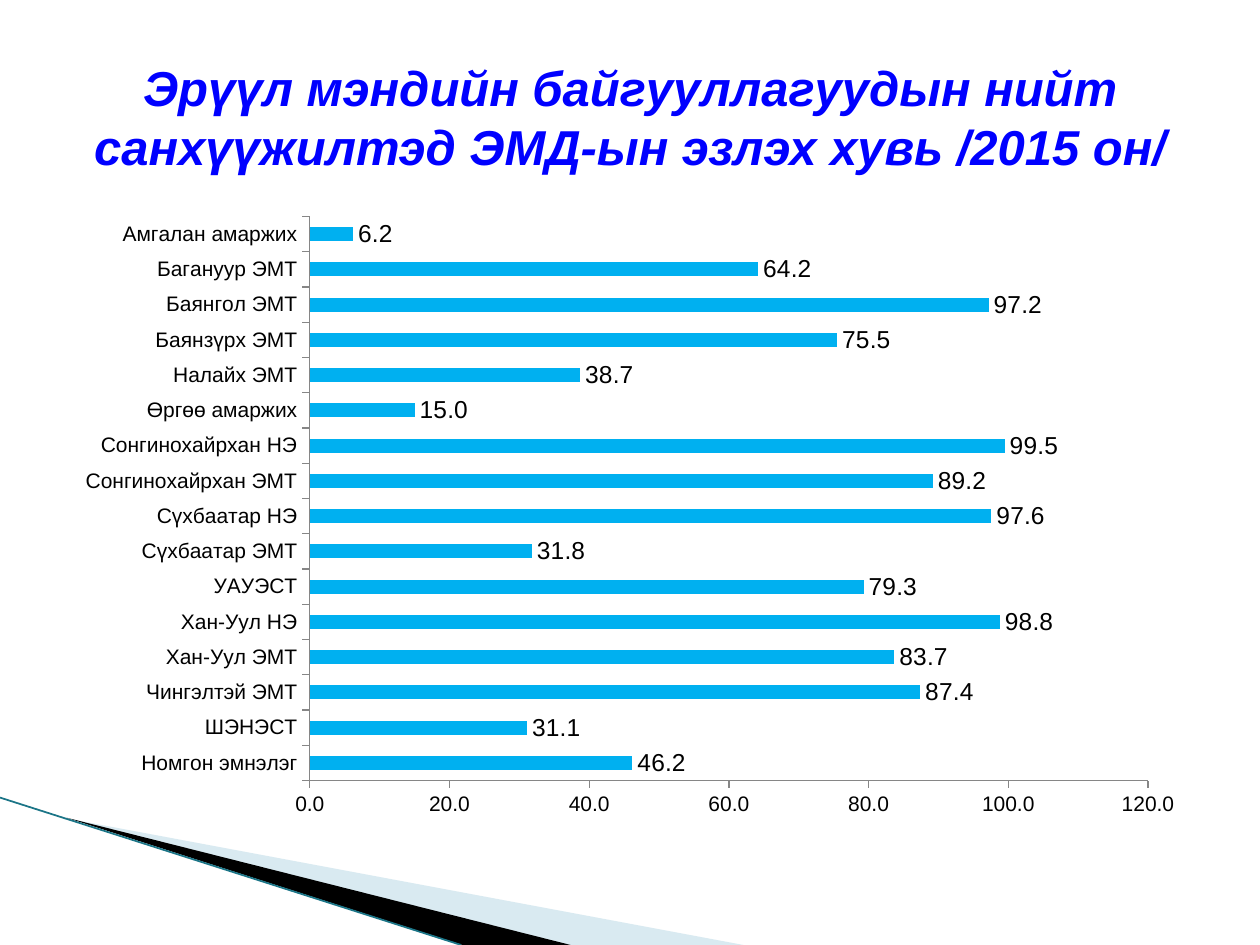
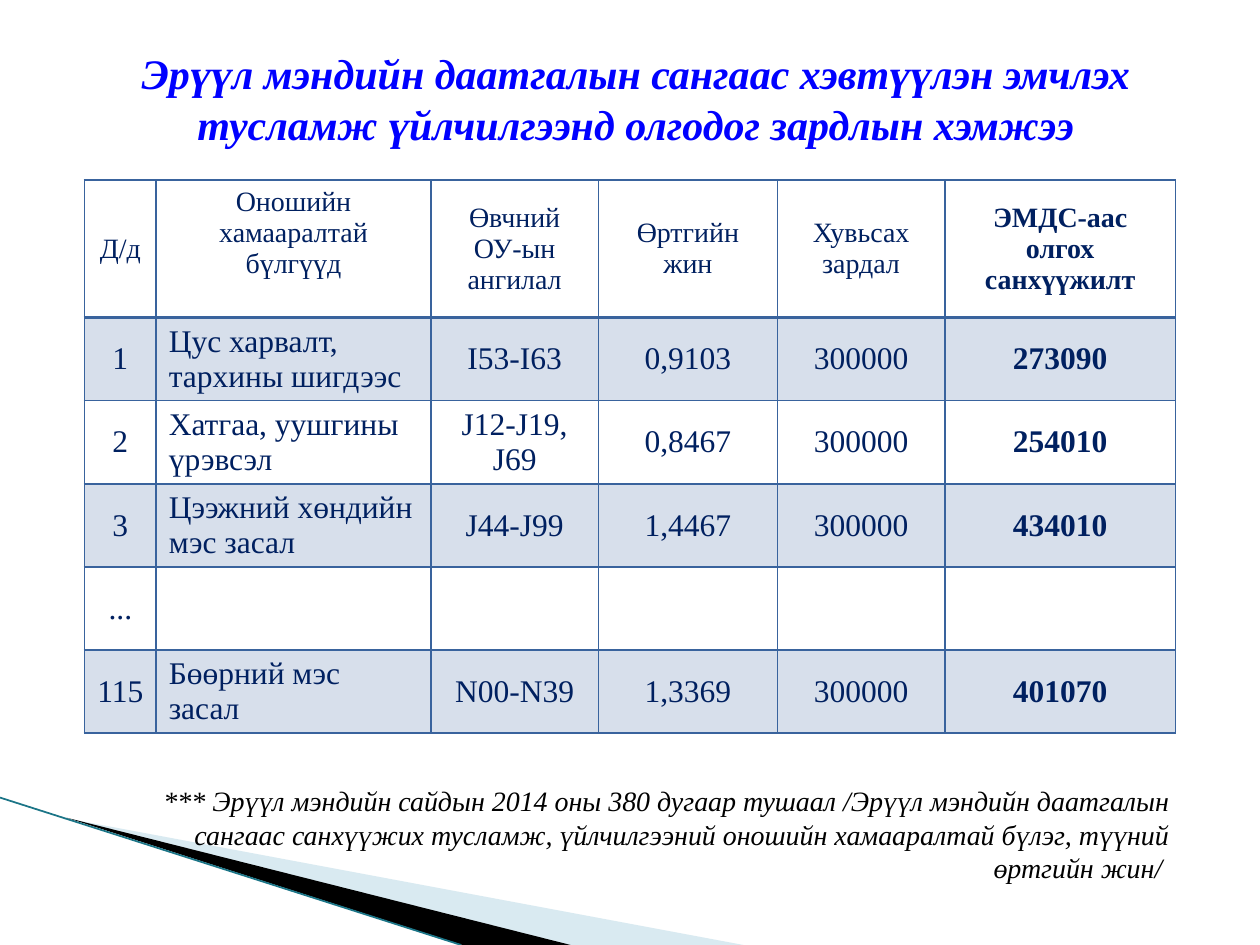
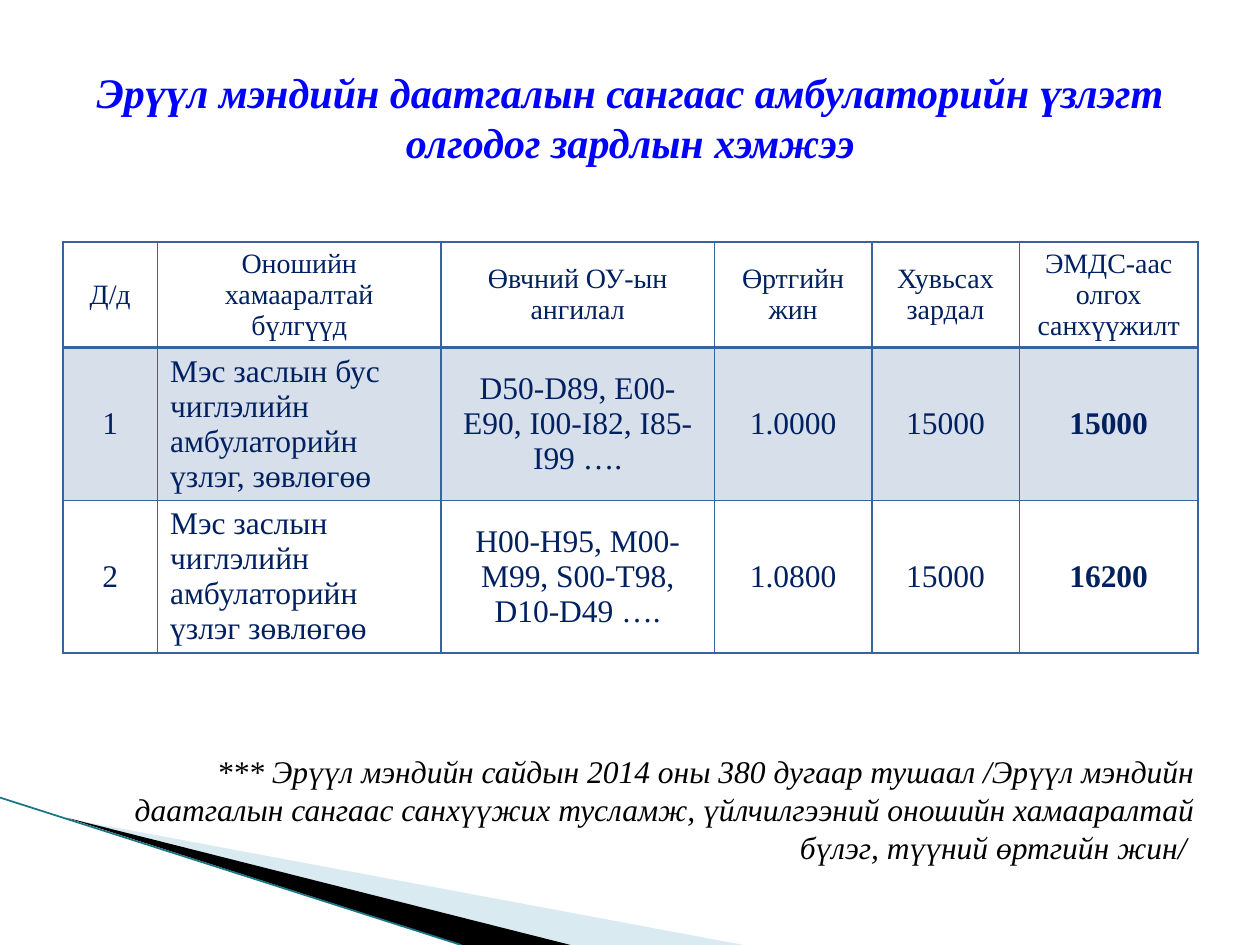
from lxml.etree import SubElement
from pptx import Presentation
from pptx.chart.data import CategoryChartData
from pptx.dml.color import RGBColor
from pptx.enum.chart import XL_CHART_TYPE as ChartType, XL_LABEL_POSITION as LabelPosition
from pptx.enum.chart import XL_TICK_MARK as TickMark
from pptx.enum.shapes import MSO_CONNECTOR as Connector
from pptx.enum.text import MSO_ANCHOR as Anchor, MSO_AUTO_SIZE as AutoSize, PP_ALIGN as Align
from pptx.oxml.ns import qn
from pptx.util import Inches, Pt

COLORS = {
    "title": "0000FF",
    "text": "000000",
    "cell": "002060",
    "grid": "39639D",
    "bar": "00B0F0",
    "axis": "868686",
    "wedge": "A0CBDC",
    "edge": "1B7587",
}
SANS, SERIF = "Arial", "Times New Roman"
TITLE_BOX = (0.5, 0.3, 9, 1.25)
WEDGES = [
    ("wedge", 40, [(0.55, 6.5), (5.9, 7.5), (4.52, 7.5)]),
    ("text", 100, [(0.53, 6.49), (4.53, 7.5), (3.67, 7.5)]),
]
SHARES = [
    ("Номгон эмнэлэг", 46.2), ("ШЭНЭСТ", 31.1), ("Чингэлтэй ЭМТ", 87.4),
    ("Хан-Уул ЭМТ", 83.7), ("Хан-Уул НЭ", 98.8), ("УАУЭСТ", 79.3),
    ("Сүхбаатар ЭМТ", 31.8), ("Сүхбаатар НЭ", 97.6),
    ("Сонгинохайрхан ЭМТ", 89.2), ("Сонгинохайрхан НЭ", 99.5),
    ("Өргөө амаржих", 15.0), ("Налайх ЭМТ", 38.7), ("Баянзүрх ЭМТ", 75.5),
    ("Баянгол ЭМТ", 97.2), ("Багануур ЭМТ", 64.2), ("Амгалан амаржих", 6.2),
]
HEADINGS = ["Д/д", "Оношийн хамааралтай бүлгүүд", "Өвчний ОУ-ын ангилал",
            "Өртгийн жин", "Хувьсах зардал", "ЭМДС-аас олгох санхүүжилт"]
INPATIENT = [
    ["1", "Цус харвалт, тархины шигдээс", "I53-I63", "0,9103", "300000", "273090"],
    ["2", "Хатгаа, уушгины үрэвсэл", "J12-J19, J69", "0,8467", "300000", "254010"],
    ["3", "Цээжний хөндийн мэс засал", "J44-J99", "1,4467", "300000", "434010"],
    ["...", "", "", "", "", ""],
    ["115", "Бөөрний мэс засал", "N00-N39", "1,3369", "300000", "401070"],
]
OUTPATIENT = [
    ["1", "Мэс заслын бус чиглэлийн амбулаторийн үзлэг, зөвлөгөө",
     "D50-D89, E00-E90, I00-I82, I85-I99 ….", "1.0000", "15000", "15000"],
    ["2", "Мэс заслын чиглэлийн амбулаторийн үзлэг зөвлөгөө",
     "H00-H95, M00-M99, S00-T98, D10-D49 ….", "1.0800", "15000", "16200"],
]
ORDER_NOTE = ("*** Эрүүл мэндийн сайдын 2014 оны 380 дугаар тушаал /Эрүүл мэндийн даатгалын "
              "сангаас санхүүжих тусламж, үйлчилгээний оношийн хамааралтай бүлэг, "
              "түүний өртгийн жин/ ")


def rgb(name):
    """Return the named colour."""
    return RGBColor.from_string(COLORS[name])


def style_font(font, size, face=SANS, color="text", bold=False, italic=False):
    """Format one font."""
    font.name, font.size = face, Pt(size)
    font.bold, font.italic = bold, italic
    font.color.rgb = rgb(color)


def write(frame, text, align=Align.CENTER, **style):
    """Fill a text frame with one formatted paragraph and return it."""
    para = frame.paragraphs[0]
    para.alignment = align
    if text:
        span = para.add_run()
        span.text = text
        style_font(span.font, **style)
    else:
        style_font(para.font, **style)
    return para


def fade(properties, percent):
    """Make the solid fill in a properties element partly transparent."""
    color = properties.find(qn("a:solidFill"))[0]
    SubElement(color, qn("a:alpha"), val=str(percent * 1000))


def add_corner(page):
    """Draw the wedges and the edge line in the bottom left corner."""
    for color, opacity, points in WEDGES:
        corners = [(Inches(x), Inches(y)) for x, y in points]
        builder = page.shapes.build_freeform(*corners[0])
        builder.add_line_segments(corners[1:])
        wedge = builder.convert_to_shape()
        wedge.shadow.inherit = False
        wedge.fill.solid()
        wedge.fill.fore_color.rgb = rgb(color)
        wedge.line.fill.background()
        fade(wedge._element.spPr, opacity)
    edge = page.shapes.add_connector(
        Connector.STRAIGHT, Inches(0), Inches(6.33), Inches(3.66), Inches(7.5))
    edge.line.color.rgb = rgb("edge")
    edge.line.width = Pt(1)
    SubElement(edge._element.spPr, qn("a:effectLst"))


def add_page(deck, title, box=TITLE_BOX, anchor=Anchor.MIDDLE, size=24, face=SERIF):
    """Add a slide with its corner and title."""
    page = deck.slides.add_slide(deck.slide_layouts[5])
    add_corner(page)
    holder = page.shapes.title
    holder.left, holder.top, holder.width, holder.height = map(Inches, box)
    frame = holder.text_frame
    frame.word_wrap, frame.auto_size = True, AutoSize.NONE
    frame.vertical_anchor = anchor
    write(frame, title, size=size, face=face, color="title", bold=True, italic=True)
    return page


def add_share_chart(page, box):
    """Draw the bar chart of insurance shares."""
    data = CategoryChartData(number_format="0.0")
    data.categories = [name for name, _ in SHARES]
    data.add_series("Series 1", [share for _, share in SHARES])
    chart = page.shapes.add_chart(ChartType.BAR_CLUSTERED, *map(Inches, box), data).chart
    chart.has_legend = chart.has_title = False
    style_font(chart.font, 12)
    for axis in (chart.category_axis, chart.value_axis):
        axis.has_major_gridlines = False
        axis.major_tick_mark = TickMark.OUTSIDE
        axis.format.line.color.rgb = rgb("axis")
        style_font(axis.tick_labels.font, 12)
    scale = chart.value_axis
    scale.minimum_scale, scale.maximum_scale, scale.major_unit = 0, 120, 20
    scale.tick_labels.number_format = "0.0"
    scale.tick_labels.number_format_is_linked = False
    plot = chart.plots[0]
    plot.gap_width, plot.vary_by_categories = 150, False
    fill = plot.series[0].format.fill
    fill.solid()
    fill.fore_color.rgb = rgb("bar")
    plot.has_data_labels = True
    labels = plot.data_labels
    labels.show_value, labels.position = True, LabelPosition.OUTSIDE_END
    labels.number_format, labels.number_format_is_linked = "0.0", False
    style_font(labels.font, 14)


def add_borders(properties, top, bottom):
    """Put the four borders of a cell in front of its fill."""
    for index, (side, width) in enumerate(zip("LRTB", (1, 1, top, bottom))):
        line = SubElement(properties, qn(f"a:ln{side}"), w=str(Pt(width)))
        color = SubElement(SubElement(line, qn("a:solidFill")), qn("a:srgbClr"))
        color.set("val", COLORS["grid"])
        properties.insert(index, line)


def format_cell(cell, text, row, column, bold):
    """Fill, frame and write one table cell."""
    properties = cell._tc.get_or_add_tcPr()
    if row % 2:
        cell.fill.solid()
        cell.fill.fore_color.rgb = rgb("grid")
        fade(properties, 20)
    else:
        cell.fill.background()
    add_borders(properties, 2 if row == 1 else 1, 2 if row == 0 else 1)
    cell.vertical_anchor = Anchor.MIDDLE
    align = Align.LEFT if row and column == 1 else Align.CENTER
    write(cell.text_frame, text, align, size=18 if row else 16,
          face=SERIF, color="cell", bold=bold)


def add_cost_table(page, left, top, widths, heights, records, bold_heading=False):
    """Draw a cost table whose last column is bold."""
    table = page.shapes.add_table(
        len(heights), len(widths), Inches(left), Inches(top),
        Inches(sum(widths)), Inches(sum(heights))).table
    for column, width in zip(table.columns, widths):
        column.width = Inches(width)
    for line, height in zip(table.rows, heights):
        line.height = Inches(height)
    for row, record in enumerate([HEADINGS] + records):
        for column, text in enumerate(record):
            bold = column == len(widths) - 1 and (row > 0 or bold_heading)
            format_cell(table.cell(row, column), text, row, column, bold)
    group_heading = table.cell(0, 1)
    group_heading.margin_left = group_heading.margin_right = Inches(0.2)
    return table


def add_note(page, box, size):
    """Write the right-aligned note about the order."""
    frame = page.shapes.add_textbox(*map(Inches, box)).text_frame
    frame.word_wrap = True
    para = write(frame, ORDER_NOTE, Align.RIGHT, size=size, face=SERIF, italic=True)
    properties = para._p.get_or_add_pPr()
    properties.set("marL", str(Inches(0.38)))
    properties.set("indent", str(Inches(-0.38)))


def build_share_page(deck):
    """Build the slide with the share chart."""
    page = add_page(deck, "Эрүүл мэндийн байгууллагуудын нийт санхүүжилтэд "
                    "ЭМД-ын эзлэх хувь /2015 он/", size=28, face=SANS)
    add_share_chart(page, (0.5, 1.62, 9, 4.95))


def build_inpatient_page(deck):
    """Build the slide with inpatient costs."""
    page = add_page(deck, "Эрүүл мэндийн даатгалын сангаас хэвтүүлэн эмчлэх тусламж "
                    "үйлчилгээнд олгодог зардлын хэмжээ",
                    box=(0.67, 0.33, 8.75, 0.91), anchor=Anchor.TOP)
    table = add_cost_table(page, 0.67, 1.43, [0.57, 2.18, 1.33, 1.42, 1.33, 1.83],
                           [1.09] + [0.66] * 5, INPATIENT, bold_heading=True)
    table.cell(0, 1).vertical_anchor = Anchor.TOP
    add_note(page, (0.92, 6.17, 8.46, 0.83), 16)


def build_outpatient_page(deck):
    """Build the slide with outpatient costs."""
    page = add_page(deck, "Эрүүл мэндийн даатгалын сангаас амбулаторийн үзлэгm "
                    "олгодог зардлын хэмжээ")
    add_cost_table(page, 0.5, 1.92, [0.75, 2.25, 2.17, 1.25, 1.17, 1.42],
                   [0.84, 1.21, 1.21], OUTPATIENT)
    add_note(page, (0.58, 5.92, 9, 1.01), 18)


def main():
    """Build and save the deck."""
    deck = Presentation()
    deck.slide_width, deck.slide_height = Inches(10), Inches(7.5)
    build_share_page(deck)
    build_inpatient_page(deck)
    build_outpatient_page(deck)
    deck.save("out.pptx")


if __name__ == "__main__":
    main()
